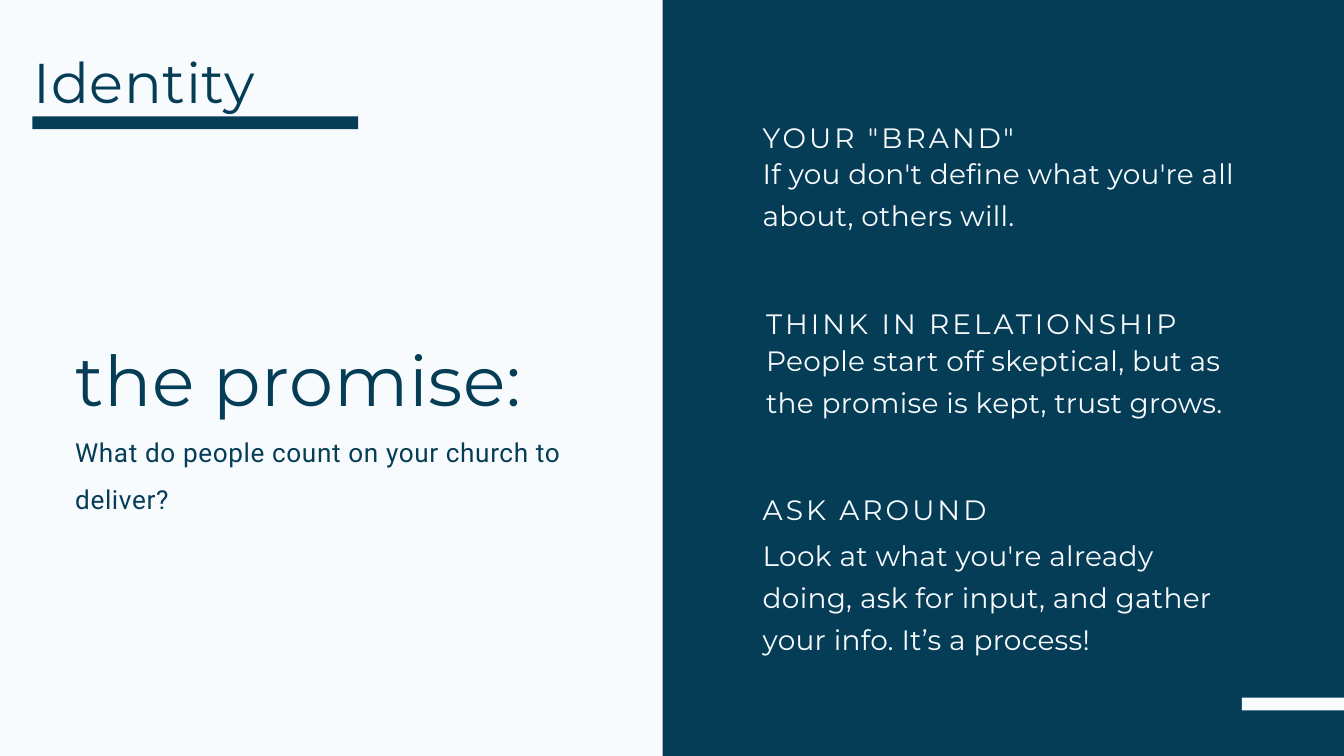
import pptx
import pptx.dml.color
import pptx.enum.shapes
import pptx.enum.text
import pptx.util

Pt = pptx.util.Pt

NAVY, PALE = "053D57", "F8FBFD"

# Content: places are left, top, width, height in points
TITLE = "Identity"
PROMISE = "the promise:"
QUESTION = "What do people count on your church to deliver?"
BLOCKS = [
    # heading, body, left, heading top, body top, body height
    ('YOUR "BRAND"', "If you don't define what you're all about, others will.",
     817.2, 118.8, 158.4, 87),
    ("THINK IN RELATIONSHIP",
     "People start off skeptical, but as the promise is kept, trust grows.",
     820.8, 319, 358.6, 87),
    ("ASK AROUND",
     "Look at what you're already doing, ask for input, and gather "
     "your info. It’s a process!",
     817.2, 517.7, 568, 132.5),
]
BARS = [
    ((710, -32, 731.5, 873.5), NAVY),  # right panel
    ((1330.6, 747.4, 349.2, 13.7), PALE),  # corner accent
    ((34.6, 124.6, 349.2, 13.7), NAVY),  # title underline
]


def color(value):
    return pptx.dml.color.RGBColor.from_string(value)


def write(paragraph, text, *, size, fill, line, tracking, font="Montserrat"):
    paragraph.alignment = pptx.enum.text.PP_ALIGN.LEFT
    paragraph.line_spacing = line
    paragraph.space_before = paragraph.space_after = Pt(0)
    run = paragraph.add_run()
    run.text = text
    run.font.name = font
    run.font.size = Pt(size)
    run.font.bold = False
    run.font.color.rgb = color(fill)
    run.font._element.set("spc", str(round(tracking * 100)))


def prepare(shape):
    frame = shape.text_frame
    frame.word_wrap = True
    frame.auto_size = pptx.enum.text.MSO_AUTO_SIZE.NONE
    frame.vertical_anchor = pptx.enum.text.MSO_ANCHOR.TOP
    frame.margin_left = frame.margin_right = Pt(0)
    frame.margin_top = frame.margin_bottom = Pt(0)
    return frame


def add_text_frame(slide, *place):
    return prepare(slide.shapes.add_textbox(*map(Pt, place)))


def add_bar(slide, place, fill):
    shape = slide.shapes.add_shape(
        pptx.enum.shapes.MSO_SHAPE.RECTANGLE, *map(Pt, place))
    shape.shadow.inherit = False
    shape.fill.solid()
    shape.fill.fore_color.rgb = color(fill)
    shape.line.fill.background()


def main():
    presentation = pptx.Presentation()
    presentation.slide_width, presentation.slide_height = Pt(1440), Pt(810)
    slide = presentation.slides.add_slide(presentation.slide_layouts[5])
    slide.background.fill.solid()
    slide.background.fill.fore_color.rgb = color(PALE)

    # Panel and accent bars
    for place, fill in BARS:
        add_bar(slide, place, fill)

    # Title
    title = slide.shapes.title
    title.left, title.top, title.width, title.height = map(
        Pt, (36, 28, 530.6, 87))
    write(prepare(title).paragraphs[0], TITLE,
          size=60, fill=NAVY, line=Pt(94.5), tracking=0.7)

    # Promise and its question
    frame = add_text_frame(slide, 80.6, 356.4, 530.6, 193)
    write(frame.paragraphs[0], PROMISE,
          size=75, fill=NAVY, line=Pt(94.5), tracking=0.7)
    write(frame.add_paragraph(), QUESTION,
          size=28, fill=NAVY, line=1.5, tracking=0.7, font="Roboto")

    # Headed advice on the panel
    for heading, body, left, heading_top, body_top, body_height in BLOCKS:
        frame = add_text_frame(slide, left, heading_top, 507, 42)
        write(frame.paragraphs[0], heading,
              size=30, fill=PALE, line=Pt(45.9), tracking=3.3)
        frame = add_text_frame(slide, left, body_top, 509.8, body_height)
        write(frame.paragraphs[0], body,
              size=30, fill=PALE, line=Pt(45), tracking=0.3)

    presentation.save("out.pptx")


if __name__ == "__main__":
    main()
